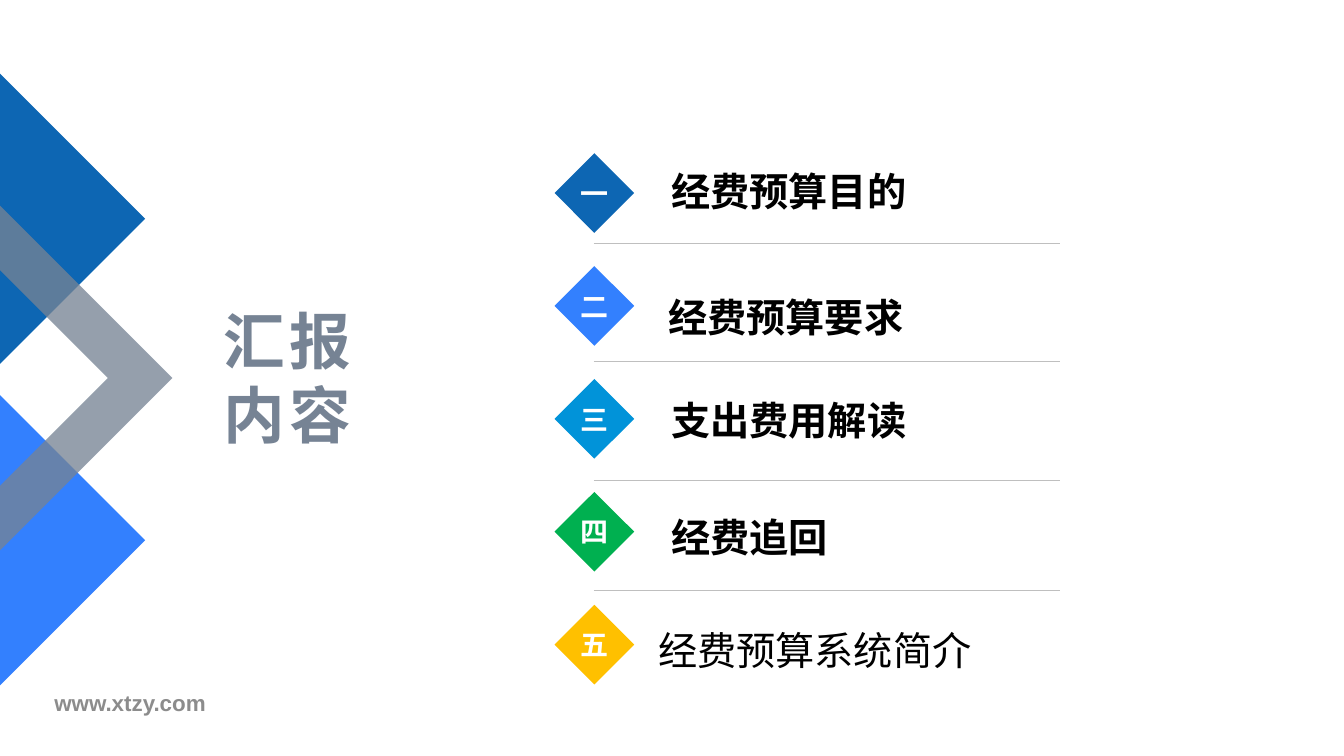
from lxml import etree
from pptx import Presentation
from pptx.dml.color import RGBColor
from pptx.enum.shapes import MSO_CONNECTOR, MSO_SHAPE
from pptx.enum.text import MSO_ANCHOR, MSO_AUTO_SIZE, PP_ALIGN
from pptx.oxml.ns import qn
from pptx.util import Pt

PX = 9144  # 100 px to the inch
DIAMOND = MSO_SHAPE.DIAMOND
STRAIGHT = MSO_CONNECTOR.STRAIGHT
MIDDLE, TOP = MSO_ANCHOR.MIDDLE, MSO_ANCHOR.TOP
LEFT, CENTER, RIGHT = PP_ALIGN.LEFT, PP_ALIGN.CENTER, PP_ALIGN.RIGHT

NAVY = RGBColor(0x0D, 0x66, 0xB3)
BLUE = RGBColor(0x33, 0x80, 0xFE)
SKY = RGBColor(0x01, 0x93, 0xD9)
GREEN = RGBColor(0x00, 0xB0, 0x50)
AMBER = RGBColor(0xFF, 0xC0, 0x00)
SLATE = RGBColor(0x76, 0x83, 0x94)
GREY = RGBColor(0x8C, 0x8C, 0x8C)
RULE_GREY = RGBColor(0xBF, 0xBF, 0xBF)
WHITE = RGBColor(0xFF, 0xFF, 0xFF)
BLACK = RGBColor(0x00, 0x00, 0x00)


def write(shape, lines, anchor, align, wrap, spacing=None, **font_format):
    """Fill a shape's text frame, one paragraph per line."""
    frame = shape.text_frame
    frame.word_wrap = wrap
    frame.vertical_anchor = anchor
    frame.text = "\n".join(lines)
    for paragraph in frame.paragraphs:
        paragraph.alignment = align
        paragraph.line_spacing = spacing
        font = paragraph.runs[0].font
        font.color.rgb = font_format["color"]
        for key in ("name", "size", "bold"):
            setattr(font, key, font_format[key])


def paint(shape, color):
    shape.shadow.inherit = False
    shape.fill.solid()
    shape.fill.fore_color.rgb = color
    shape.line.fill.background()


prs = Presentation()
prs.slide_width, prs.slide_height = 1333 * PX, 750 * PX
slide = prs.slides.add_slide(prs.slide_layouts[6])
shapes = slide.shapes

website = shapes.add_textbox(44 * PX, 677 * PX, 422 * PX, 40 * PX)
write(website, ["www.xtzy.com"], MIDDLE, LEFT, True,
      name="Arial", size=Pt(16), bold=True, color=GREY)

# Left-edge decoration: two triangles under a translucent chevron
edge_outlines = [
    (BLUE, [(0, 392), (144, 536), (0, 680)]),
    (NAVY, [(0, 73), (144, 217), (0, 361)]),
    (SLATE, [(171, 375), (0, 546), (0, 482), (107, 375), (0, 268), (0, 204)]),
]
for color, points in edge_outlines:
    builder = shapes.build_freeform(*points[0], scale=PX)
    builder.add_line_segments(points[1:], close=True)
    edge_shape = builder.convert_to_shape()
    paint(edge_shape, color)
chevron_color = edge_shape.fill._xPr.find(f"{qn('a:solidFill')}/{qn('a:srgbClr')}")
etree.SubElement(chevron_color, qn("a:alpha"), val="77000")

title = shapes.add_textbox(171 * PX, 296 * PX, 187 * PX, 158 * PX)
write(title, ["汇报", "内容"], TOP, RIGHT, True,
      name="Arial", size=Pt(44), bold=True, color=SLATE)
title.text_frame.auto_size = MSO_AUTO_SIZE.SHAPE_TO_FIT_TEXT
for paragraph in title.text_frame.paragraphs:
    paragraph.runs[0].font._element.set("spc", "300")

for rule_y in (241, 358, 476, 585):
    rule = shapes.add_connector(STRAIGHT, 589 * PX, rule_y * PX, 1051 * PX, rule_y * PX)
    rule.line.color.rgb = RULE_GREY
    rule.line.width = Pt(0.25)
    etree.SubElement(rule._element.spPr, qn("a:effectLst"))

# Agenda: number, diamond colour, heading, heading left and top, bold
agenda = [
    ("一", NAVY, "经费预算目的", 656, 164, True),
    ("二", BLUE, "经费预算要求", 653, 289, True),
    ("三", SKY, "支出费用解读", 656, 391, True),
    ("四", GREEN, "经费追回", 656, 507, True),
    ("五", AMBER, "经费预算系统简介", 643, 620, False),
]
for index, (number, color, heading, left, top, bold) in enumerate(agenda):
    marker = shapes.add_shape(DIAMOND, 550 * PX, (152 + 112 * index) * PX, 79 * PX, 79 * PX)
    paint(marker, color)
    write(marker, [number], MIDDLE, CENTER, False,
          name="Roboto Condensed", size=Pt(20), bold=True, color=WHITE)
    label = shapes.add_textbox(left * PX, top * PX, 504 * PX, 41 * PX)
    write(label, [heading], MIDDLE, LEFT, True, spacing=1.2,
          name="Arial", size=Pt(28), bold=bold, color=BLACK)

prs.save("out.pptx")
